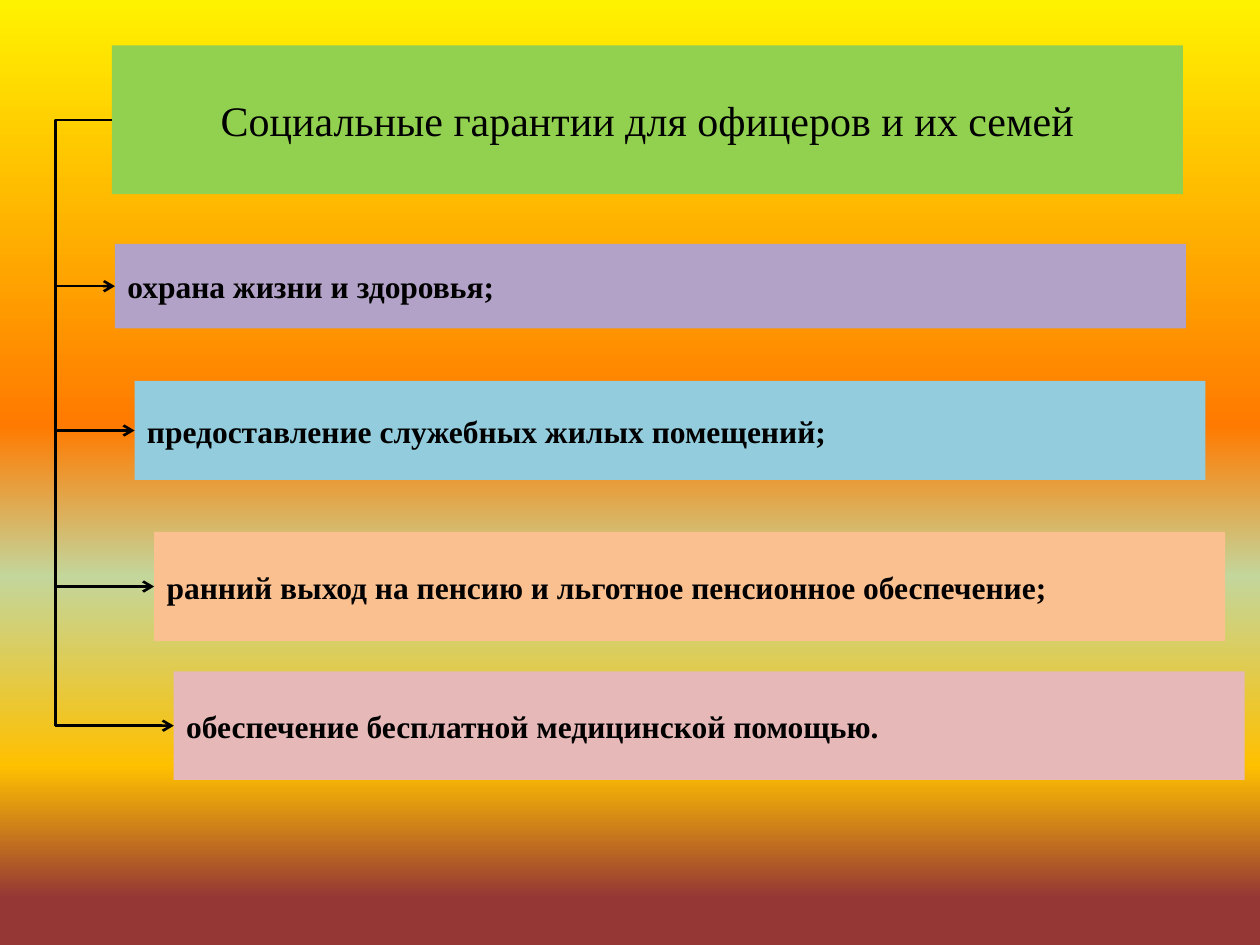
from copy import deepcopy
from dataclasses import dataclass

from pptx import Presentation
from pptx.dml.color import RGBColor
from pptx.enum.shapes import MSO_CONNECTOR, MSO_SHAPE
from pptx.enum.text import MSO_ANCHOR, PP_ALIGN
from pptx.oxml.ns import qn
from pptx.shapes.autoshape import Shape
from pptx.shapes.connector import Connector
from pptx.slide import Slide
from pptx.util import Pt
from lxml.etree import SubElement

BLACK = RGBColor(0x00, 0x00, 0x00)
GREEN = RGBColor(0x92, 0xD0, 0x50)
PURPLE = RGBColor(0xB3, 0xA2, 0xC7)
BLUE = RGBColor(0x93, 0xCD, 0xDD)
PEACH = RGBColor(0xFA, 0xC0, 0x90)
PINK = RGBColor(0xE6, 0xB9, 0xB8)
GRADIENT = [
    (0, RGBColor(0xFF, 0xF2, 0x00)),
    (0.45, RGBColor(0xFF, 0x7A, 0x00)),
    (0.61, RGBColor(0xC3, 0xD6, 0x9B)),
    (0.81, RGBColor(0xFF, 0xC0, 0x00)),
    (0.95, RGBColor(0x95, 0x37, 0x35)),
]
FONT = "Times New Roman"
BOX_WIDTH = 612
FIRST_LEFT = 65.7
INDENT_STEP = 11.2
RAIL_X = 31.7


@dataclass
class Guarantee:
    text: str
    top: float
    height: float
    color: RGBColor


TITLE = Guarantee("Социальные гарантии для офицеров и их семей", 26, 85, GREEN)
GUARANTEES = [
    Guarantee("охрана жизни и здоровья;", 139.4, 48.3, PURPLE),
    Guarantee("предоставление служебных жилых помещений;", 217.7, 56.6, BLUE),
    Guarantee("ранний выход на пенсию и льготное пенсионное обеспечение;", 304, 62.3, PEACH),
    Guarantee("обеспечение бесплатной медицинской помощью.", 383.7, 62, PINK),
]


def paint_background(s: Slide) -> None:
    fill = s.background.fill
    fill.gradient()
    fill.gradient_angle = 270
    stops = s._element.find(".//" + qn("a:gsLst"))
    while len(stops) < len(GRADIENT):
        stops.append(deepcopy(stops[0]))
    for stop, (position, color) in zip(fill.gradient_stops, GRADIENT):
        stop.position = position
        stop.color.rgb = color


def add_box(s: Slide, box: Guarantee, left: float, size: int, bold: bool, align: PP_ALIGN) -> Shape:
    sp = s.shapes.add_shape(MSO_SHAPE.RECTANGLE, Pt(left), Pt(box.top), Pt(BOX_WIDTH), Pt(box.height))
    sp.shadow.inherit = False
    sp.fill.solid()
    sp.fill.fore_color.rgb = box.color
    sp.line.fill.background()
    tf = sp.text_frame
    tf.word_wrap = True
    tf.vertical_anchor = MSO_ANCHOR.MIDDLE
    p = tf.paragraphs[0]
    p.text = box.text
    p.alignment = align
    p.font.name = FONT
    p.font.size = Pt(size)
    p.font.bold = bold
    p.font.color.rgb = BLACK
    return sp


def add_line(s: Slide, kind: MSO_CONNECTOR, x1: float, y1: float, x2: float, y2: float) -> Connector:
    line = s.shapes.add_connector(kind, Pt(x1), Pt(y1), Pt(x2), Pt(y2))
    line.line.color.rgb = BLACK
    line.line.width = Pt(1.5)
    SubElement(line._element.spPr, qn("a:effectLst"))
    return line


def add_arrow(s: Slide, target: Shape, y: float) -> None:
    arrow = add_line(s, MSO_CONNECTOR.STRAIGHT, RAIL_X, y, target.left.pt, y)
    SubElement(arrow.line._get_or_add_ln(), qn("a:tailEnd"), type="arrow")
    arrow.end_connect(target, 1)


def add_rail(s: Slide, title: Shape, bottom: float) -> None:
    middle = TITLE.top + TITLE.height / 2
    rail = add_line(s, MSO_CONNECTOR.ELBOW, title.left.pt, middle, RAIL_X, bottom)
    rail._element.spPr.find(qn("a:prstGeom")).set("prst", "bentConnector2")
    rail.begin_connect(title, 1)


def main() -> None:
    prs = Presentation()
    prs.slide_width, prs.slide_height = Pt(720), Pt(540)
    s = prs.slides.add_slide(prs.slide_layouts[6])
    paint_background(s)
    title = add_box(s, TITLE, 64, 24, False, PP_ALIGN.CENTER)
    for i, item in enumerate(GUARANTEES):
        sp = add_box(s, item, FIRST_LEFT + i * INDENT_STEP, 18, True, PP_ALIGN.JUSTIFY)
        add_arrow(s, sp, item.top + item.height / 2)
    last = GUARANTEES[-1]
    add_rail(s, title, last.top + last.height / 2)
    prs.save("out.pptx")


if __name__ == "__main__":
    main()
